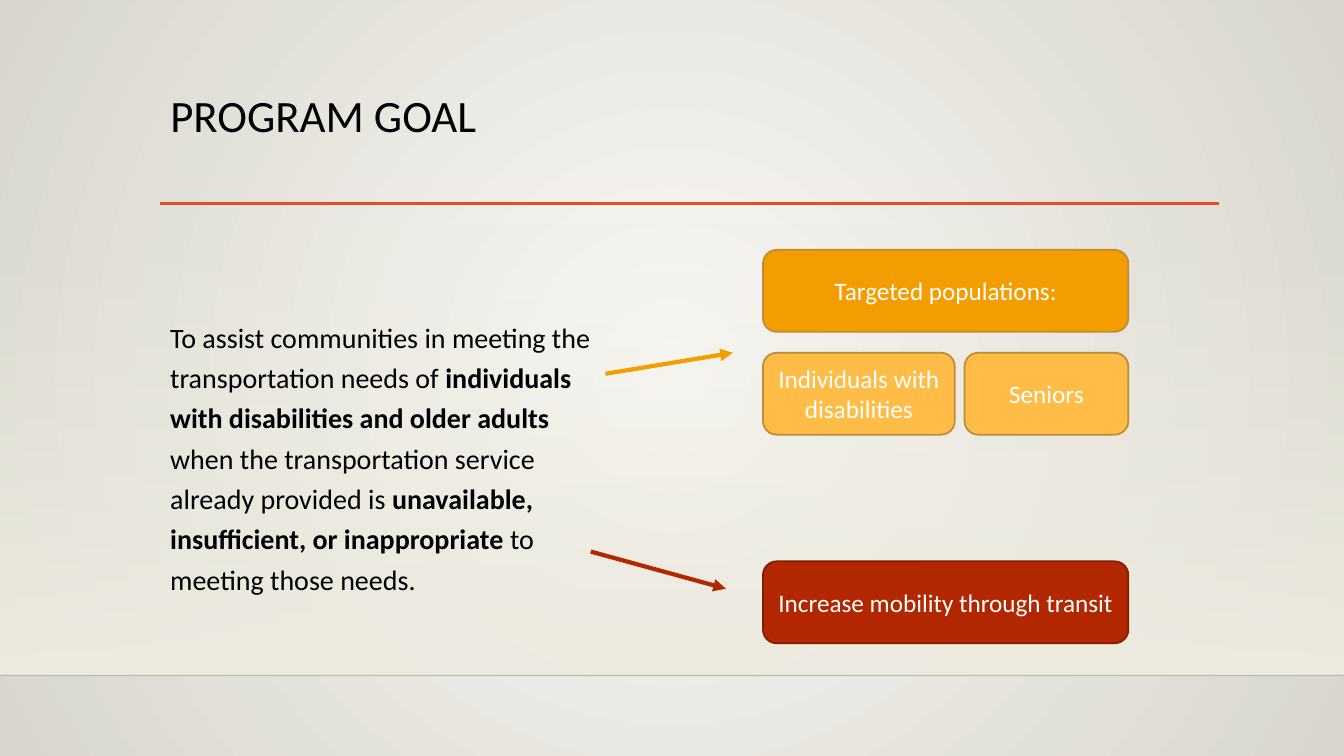
"""Build the program goal slide with its target groups and mobility aim."""
from lxml.etree import SubElement
from pptx import Presentation
from pptx.dml.color import RGBColor
from pptx.enum.shapes import MSO_CONNECTOR, MSO_SHAPE
from pptx.enum.text import MSO_ANCHOR, MSO_AUTO_SIZE, PP_ALIGN
from pptx.oxml.ns import qn
from pptx.util import Pt

SLIDE_WIDTH, SLIDE_HEIGHT = 960, 540
FONT = "Calibri"
HEADING = "PROGRAM GOAL"
GOAL = [
    ("To assist communities in meeting the transportation needs of ", False),
    ("individuals with disabilities and older adults ", True),
    ("when the transportation service already provided is ", False),
    ("unavailable, insufficient, or inappropriate", True),
    (" to meeting those needs.", False),
]
LEFT, RULE_END = 114.5, 871
CARD_LEFT, CARD_WIDTH, CARD_HEIGHT, CARD_GAP = 545, 261, 58.5, 7
FIRST_GROUP_WIDTH = 137
SECOND_GROUP_LEFT = CARD_LEFT + FIRST_GROUP_WIDTH + CARD_GAP
SECOND_GROUP_WIDTH = CARD_WIDTH - FIRST_GROUP_WIDTH - CARD_GAP
POPULATIONS_TOP, GROUPS_TOP, MOBILITY_TOP = 178.5, 252, 401
CARDS = [
    ("Targeted populations:", CARD_LEFT, POPULATIONS_TOP, CARD_WIDTH, "F49D00", "BD8C35"),
    ("Individuals with disabilities", CARD_LEFT, GROUPS_TOP, FIRST_GROUP_WIDTH, "FFBD47", "BD8C35"),
    ("Seniors", SECOND_GROUP_LEFT, GROUPS_TOP, SECOND_GROUP_WIDTH, "FFBD47", "BD8C35"),
    ("Increase mobility through transit", CARD_LEFT, MOBILITY_TOP, CARD_WIDTH, "B22600", "841C00"),
]
ARROWS = [
    ((422, 394), (518.5, 420.5), "B22600"),
    ((432.5, 267), (523.5, 252), "F49D00"),
]


def color(value):
    return RGBColor.from_string(value)


def set_font(run, size, value, bold=False):
    run.font.name = FONT
    run.font.size = Pt(size)
    run.font.bold = bold
    run.font.color.rgb = color(value)


def set_gradient(fill, start, end):
    fill.gradient()
    for stop, position, value in zip(fill.gradient_stops, (0, 1), (start, end)):
        stop.position = position
        stop.color.rgb = color(value)


def set_alpha(properties, percent):
    first_color = next(properties.iter(qn("a:srgbClr")))
    SubElement(first_color, qn("a:alpha"), val=str(percent * 1000))


def add_line(slide, start, end, value, width):
    line = slide.shapes.add_connector(
        MSO_CONNECTOR.STRAIGHT, *(Pt(n) for n in (*start, *end)))
    line.line.color.rgb = color(value)
    line.line.width = Pt(width)
    SubElement(line._element.spPr, qn("a:effectLst"))
    return line


def add_backdrop(slide):
    set_gradient(slide.background.fill, "F9F8F5", "D8D6CC")
    gradient = next(slide.element.iter(qn("a:gradFill")))
    gradient.remove(gradient.find(qn("a:lin")))
    radial = SubElement(gradient, qn("a:path"), path="circle")
    SubElement(radial, qn("a:fillToRect"), l="50000", t="50000", r="50000", b="50000")

    band_top, floor = 159, 482.5
    band = slide.shapes.add_shape(
        MSO_SHAPE.RECTANGLE, 0, Pt(band_top), Pt(SLIDE_WIDTH), Pt(floor - band_top))
    band.shadow.inherit = False
    band.line.fill.background()
    set_gradient(band.fill, "EEECE1", "EEECE1")
    band.fill.gradient_angle = 270
    set_alpha(band._element.spPr, 0)

    horizon = add_line(slide, (0, floor), (SLIDE_WIDTH, floor), "000001", 1)
    set_alpha(horizon._element.spPr, 20)
    add_line(slide, (LEFT, 145.5), (RULE_END, 145.5), "E84C22", 2.5)


def add_heading(slide):
    title = slide.shapes.title
    title.left, title.top, title.width, title.height = Pt(LEFT), Pt(63.4), Pt(756), Pt(82.8)
    frame = title.text_frame
    frame.text = HEADING
    frame.auto_size = MSO_AUTO_SIZE.NONE
    frame.vertical_anchor = MSO_ANCHOR.TOP
    paragraph = frame.paragraphs[0]
    paragraph.alignment = PP_ALIGN.LEFT
    paragraph.line_spacing = 0.9
    set_font(paragraph.runs[0], 32, "000000")


def add_goal(slide):
    frame = slide.shapes.add_textbox(Pt(LEFT), Pt(220.3), Pt(315.5), Pt(209.5)).text_frame
    frame.word_wrap = True
    paragraph = frame.paragraphs[0]
    paragraph.line_spacing = 1.2
    for phrase, bold in GOAL:
        run = paragraph.add_run()
        run.text = phrase
        set_font(run, 20, "000000", bold)


def add_card(slide, label, left, top, width, fill, outline):
    card = slide.shapes.add_shape(
        MSO_SHAPE.ROUNDED_RECTANGLE, Pt(left), Pt(top), Pt(width), Pt(CARD_HEIGHT))
    card.shadow.inherit = False
    card.fill.solid()
    card.fill.fore_color.rgb = color(fill)
    card.line.color.rgb = color(outline)
    card.line.width = Pt(1.25)
    frame = card.text_frame
    frame.text = label
    frame.word_wrap = True
    frame.vertical_anchor = MSO_ANCHOR.MIDDLE
    frame.paragraphs[0].alignment = PP_ALIGN.CENTER
    set_font(frame.paragraphs[0].runs[0], 18, "FFFFFF")


def main():
    deck = Presentation()
    deck.slide_width, deck.slide_height = Pt(SLIDE_WIDTH), Pt(SLIDE_HEIGHT)
    slide = deck.slides.add_slide(deck.slide_layouts[5])
    add_backdrop(slide)
    add_heading(slide)
    add_goal(slide)
    for card in CARDS:
        add_card(slide, *card)
    for start, end, value in ARROWS:
        arrow = add_line(slide, start, end, value, 3)
        SubElement(arrow.line._get_or_add_ln(), qn("a:tailEnd"), type="triangle")
    deck.save("out.pptx")


if __name__ == "__main__":
    main()
